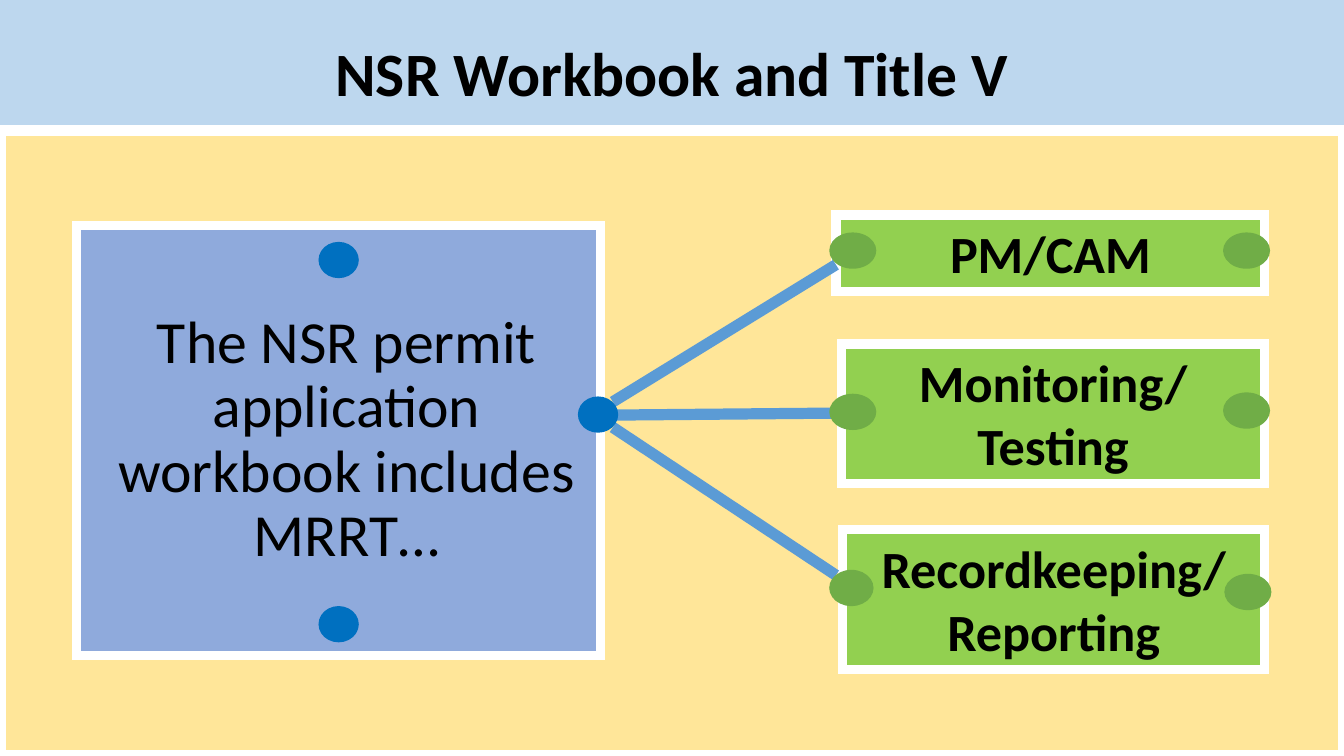
import pptx
import pptx.util
import pptx.dml.color
import pptx.enum.shapes
import pptx.enum.text
import pptx.oxml
import pptx.oxml.ns

Inches = pptx.util.Inches
Points = pptx.util.Pt
Shapes = pptx.enum.shapes.MSO_SHAPE
Anchor = pptx.enum.text.MSO_ANCHOR
AutoSize = pptx.enum.text.MSO_AUTO_SIZE

COLORS = {
    "background": "BDD7EE",
    "panel": "FFE699",
    "topic": "92D050",
    "topic_dot": "70AD47",
    "workbook": "8FAADC",
    "workbook_dot": "0070C0",
    "link": "5B9BD5",
    "border": "FFFFFF",
    "text": "000000",
}

SLIDE_WIDTH = 10
SLIDE_HEIGHT = SLIDE_WIDTH * 9 / 16
PANEL_TOP = 0.97
TITLE = "NSR Workbook and Title V"
WORKBOOK_TEXT = "The NSR permit application workbook includes MRRT…"
WORKBOOK_BOX = (0.57, 1.68, 3.9, 3.2)
WORKBOOK_DOTS = [(4.3, 2.95), (2.37, 4.51), (2.37, 1.8)]
DOT_HEIGHT = 0.27
TOPICS = [
    {
        "lines": ["PM/CAM"],
        "box": (6.22, 1.6, 3.19, 0.57),
        "link": (4.56, 2.99, 6.22, 1.97),
        "link_behind": False,
        "dots": [(6.17, 1.73, 0.35), (9.1, 1.73, 0.35)],
    },
    {
        "lines": ["Monitoring/", "Testing"],
        "box": (6.26, 2.56, 3.15, 1.04),
        "link": (4.43, 3.09, 6.68, 3.07),
        "link_behind": True,
        "dots": [(9.1, 2.92, 0.35), (6.17, 2.93, 0.35)],
    },
    {
        "lines": ["Recordkeeping/", "Reporting"],
        "box": (6.27, 3.94, 3.14, 1.04),
        "link": (4.56, 3.18, 6.22, 4.28),
        "link_behind": False,
        "dots": [(6.17, 4.24, 0.33), (9.11, 4.27, 0.35)],
    },
]

TIGHT_FRAME = {
    "vertical_anchor": Anchor.MIDDLE,
    "margin_left": Inches(0.07),
    "margin_right": Inches(0.07),
    "margin_top": Inches(0.04),
    "margin_bottom": Inches(0.04),
}
TOPIC_FRAME = {"vertical_anchor": Anchor.TOP, "auto_size": AutoSize.SHAPE_TO_FIT_TEXT}


def color(name):
    return pptx.dml.color.RGBColor.from_string(COLORS[name])


def apply(target, values):
    for name, value in values.items():
        setattr(target, name, value)


def drawing_element(tag, attributes=""):
    namespace = pptx.oxml.ns.nsdecls("a")
    return pptx.oxml.parse_xml(f"<a:{tag} {namespace} {attributes}/>")


def add_shape(slide, kind, box, fill, border_width=0):
    shape = slide.shapes.add_shape(kind, *map(Inches, box))
    shape.shadow.inherit = False
    shape.fill.solid()
    shape.fill.fore_color.rgb = color(fill)
    if border_width:
        shape.line.color.rgb = color("border")
        shape.line.width = Points(border_width)
        outline = shape._element.spPr.find(pptx.oxml.ns.qn("a:ln"))
        outline.append(drawing_element("miter", 'lim="800000"'))
    else:
        shape.line.fill.background()
    return shape


def add_dot(slide, left, top, width, fill):
    add_shape(slide, Shapes.OVAL, (left, top, width, DOT_HEIGHT), fill)


def add_link(slide, ends):
    connector = slide.shapes.add_connector(
        pptx.enum.shapes.MSO_CONNECTOR.STRAIGHT, *map(Inches, ends)
    )
    connector.line.color.rgb = color("link")
    connector.line.width = Points(6)
    connector._element.spPr.append(drawing_element("effectLst"))


def write(shape, lines, size, bold, frame_format, paragraph_format):
    frame = shape.text_frame
    frame.word_wrap = True
    apply(frame, frame_format)
    frame.text = "\n".join(lines)
    for paragraph in frame.paragraphs:
        paragraph.alignment = pptx.enum.text.PP_ALIGN.CENTER
        apply(paragraph, paragraph_format)
        font = paragraph.runs[0].font
        apply(font, {"name": "Calibri", "size": Points(size), "bold": bold})
        font.color.rgb = color("text")


def add_topic(slide, topic):
    if topic["link_behind"]:
        add_link(slide, topic["link"])
    box = add_shape(slide, Shapes.RECTANGLE, topic["box"], "topic", 5)
    write(box, topic["lines"], 28, True, TOPIC_FRAME, {})
    if not topic["link_behind"]:
        add_link(slide, topic["link"])
    for dot in topic["dots"]:
        add_dot(slide, *dot, "topic_dot")


def add_workbook(slide):
    box = add_shape(slide, Shapes.RECTANGLE, WORKBOOK_BOX, "workbook", 5)
    spacing = {"line_spacing": 0.9, "space_before": Points(10)}
    write(box, [WORKBOOK_TEXT], 32, False, TIGHT_FRAME, spacing)
    properties = box.text_frame.paragraphs[0]._p.get_or_add_pPr()
    properties.set("marL", str(Inches(0.12)))
    for left, top in WORKBOOK_DOTS:
        add_dot(slide, left, top, 0.3, "workbook_dot")


def main():
    presentation = pptx.Presentation()
    size = {"slide_width": Inches(SLIDE_WIDTH), "slide_height": Inches(SLIDE_HEIGHT)}
    apply(presentation, size)
    slide = presentation.slides.add_slide(presentation.slide_layouts[6])
    slide.background.fill.solid()
    slide.background.fill.fore_color.rgb = color("background")

    panel_box = (0, PANEL_TOP, SLIDE_WIDTH, SLIDE_HEIGHT - PANEL_TOP)
    add_shape(slide, Shapes.RECTANGLE, panel_box, "panel", 6)
    for topic in TOPICS:
        add_topic(slide, topic)
    add_workbook(slide)
    title = slide.shapes.add_textbox(*map(Inches, (0, 0.2, SLIDE_WIDTH, 0.74)))
    write(title, [TITLE], 33, True, TIGHT_FRAME, {"line_spacing": 0.9})
    presentation.save("out.pptx")


if __name__ == "__main__":
    main()
